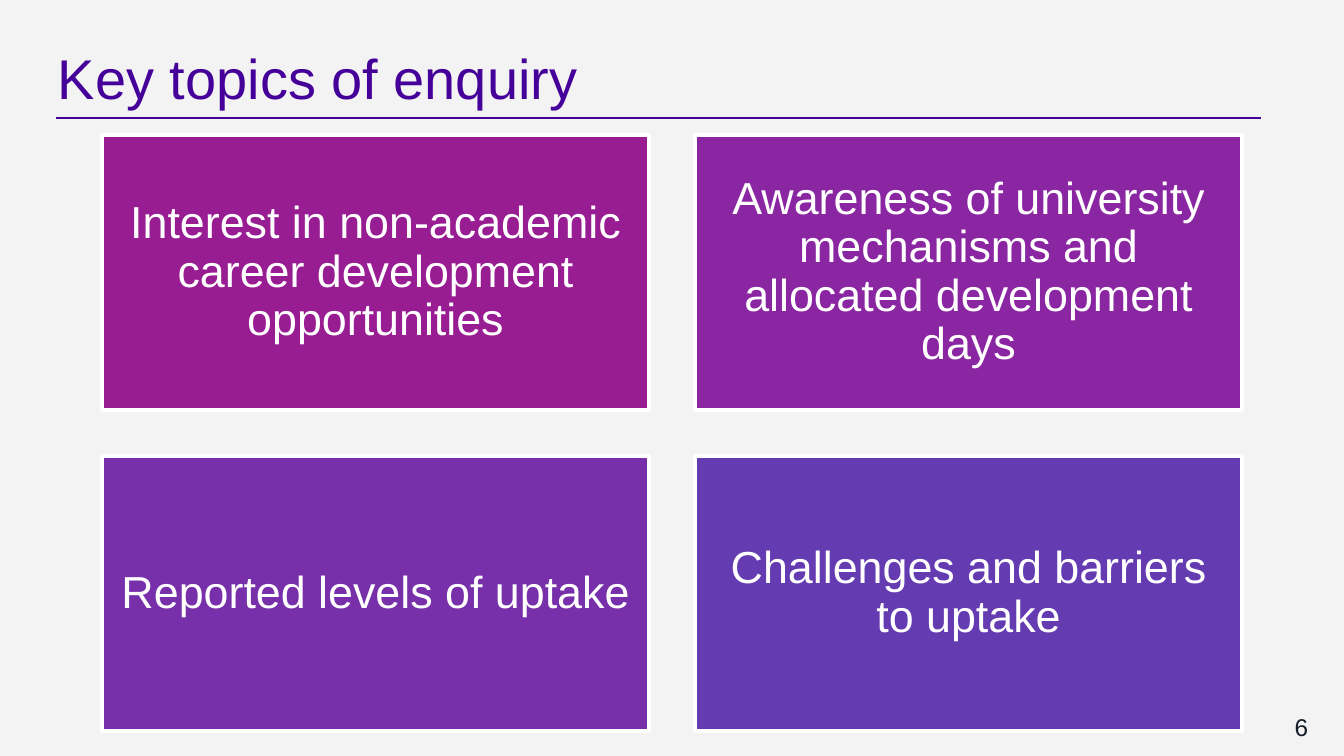
"""Build the slide on key topics of enquiry: a title above a grid of four topic boxes."""
import pptx
import pptx.dml.color
import pptx.enum.shapes
import pptx.enum.text
import pptx.oxml.ns
import pptx.util
from lxml import etree

EMU_PER_PX = 914400 / 134.4
RGBColor = pptx.dml.color.RGBColor
BACKGROUND = RGBColor(0xF3, 0xF3, 0xF3)
PURPLE = RGBColor(0x44, 0x00, 0x99)
INK = RGBColor(0x13, 0x1E, 0x29)
WHITE = RGBColor(0xFF, 0xFF, 0xFF)
MAGENTA = RGBColor(0x98, 0x1C, 0x92)
ORCHID = RGBColor(0x8A, 0x26, 0xA1)
VIOLET = RGBColor(0x77, 0x30, 0xAA)
INDIGO = RGBColor(0x65, 0x3B, 0xB2)

BOX_LEFT, BOX_TOP = 102, 135
BOX_WIDTH, BOX_HEIGHT = 547, 275
COLUMN_STEP, ROW_STEP = 593, 321
TOPICS = [
    ("Interest in non-academic career development opportunities", MAGENTA),
    ("Awareness of university mechanisms and allocated development days", ORCHID),
    ("Reported levels of uptake", VIOLET),
    ("Challenges and barriers to uptake", INDIGO),
]


def px(*lengths):
    return [pptx.util.Emu(round(length * EMU_PER_PX)) for length in lengths]


def set_text(shape, text, size, color, alignment, inset):
    frame = shape.text_frame
    frame.word_wrap = True
    frame.vertical_anchor = pptx.enum.text.MSO_ANCHOR.MIDDLE
    frame.margin_left, frame.margin_top, frame.margin_right, frame.margin_bottom = px(*[inset] * 4)
    paragraph = frame.paragraphs[0]
    paragraph.text = text
    paragraph.alignment = alignment
    paragraph.font.name = "Arial"
    paragraph.font.size = pptx.util.Pt(size)
    paragraph.font.color.rgb = color
    return paragraph


presentation = pptx.Presentation()
presentation.slide_width, presentation.slide_height = px(1344, 756)
slide = presentation.slides.add_slide(presentation.slide_layouts[6])
slide.background.fill.solid()
slide.background.fill.fore_color.rgb = BACKGROUND
align = pptx.enum.text.PP_ALIGN

rule = slide.shapes.add_connector(pptx.enum.shapes.MSO_CONNECTOR.STRAIGHT, *px(56, 118, 1261, 118))
rule.line.color.rgb = PURPLE
rule.line.width = pptx.util.Pt(0.75)
etree.SubElement(rule._element.spPr, pptx.oxml.ns.qn("a:effectLst"))

title = slide.shapes.add_textbox(*px(45, 23, 1216, 109))
set_text(title, "Key topics of enquiry", 30, PURPLE, align.LEFT, 13)

page_number = slide.shapes.add_textbox(*px(1240, 698, 81, 58))
set_text(page_number, "6", 13, INK, align.RIGHT, 13)

for index, (topic, color) in enumerate(TOPICS):
    row, column = divmod(index, 2)
    left = BOX_LEFT + column * COLUMN_STEP
    top = BOX_TOP + row * ROW_STEP
    box = slide.shapes.add_shape(
        pptx.enum.shapes.MSO_SHAPE.RECTANGLE, *px(left, top, BOX_WIDTH, BOX_HEIGHT))
    box.shadow.inherit = False
    box.fill.solid()
    box.fill.fore_color.rgb = color
    box.line.color.rgb = WHITE
    box.line.width = pptx.util.Pt(2)
    paragraph = set_text(box, topic, 24, WHITE, align.CENTER, 16)
    paragraph.line_spacing = 0.9

presentation.save("out.pptx")
